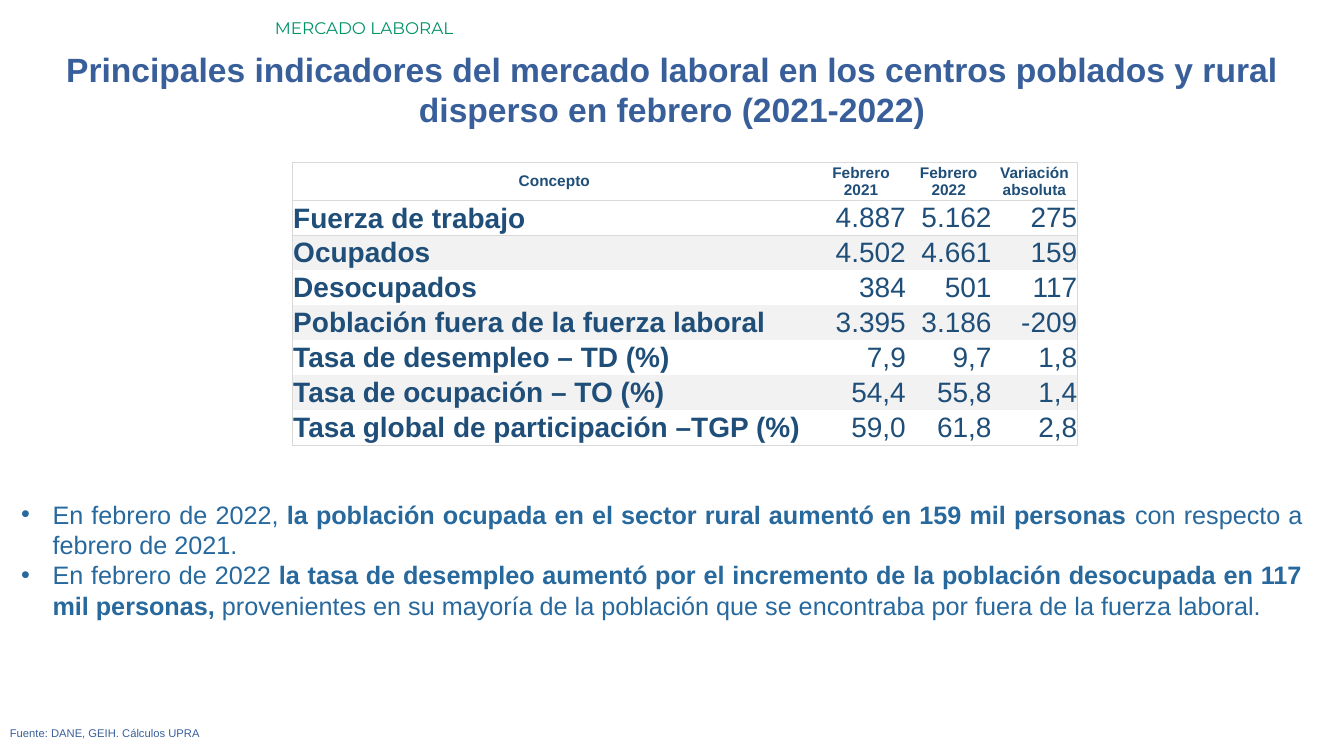
"""Build the rural labour market indicators slide."""
from lxml.etree import SubElement
from pptx import Presentation
from pptx.dml.color import RGBColor
from pptx.enum.text import MSO_ANCHOR, MSO_AUTO_SIZE, PP_ALIGN
from pptx.oxml import parse_xml
from pptx.oxml.ns import nsdecls, qn
from pptx.util import Cm, Pt

SECTION = "MERCADO LABORAL"
HEADLINE = ("Principales indicadores del mercado laboral en los centros poblados "
            "y rural disperso en febrero (2021-2022)")
SOURCE = "Fuente: DANE, GEIH. Cálculos UPRA"
INDICATORS = [
    ("Concepto", "Febrero\n2021", "Febrero\n2022", "Variación absoluta"),
    ("Fuerza de trabajo", "4.887", "5.162", "275"),
    ("Ocupados", "4.502", "4.661", "159"),
    ("Desocupados", "384", "501", "117"),
    ("Población fuera de la fuerza laboral", "3.395", "3.186", "-209"),
    ("Tasa de desempleo – TD (%)", "7,9", "9,7", "1,8"),
    ("Tasa de ocupación – TO (%)", "54,4", "55,8", "1,4"),
    ("Tasa global de participación –TGP (%)", "59,0", "61,8", "2,8"),
]
FINDINGS = [
    [("En febrero de 2022, ", False),
     ("la población ocupada en el sector rural aumentó en 159 mil personas ", True),
     ("con respecto a febrero de 2021.", False)],
    [("En febrero de 2022", False),
     (" la tasa de desempleo aumentó por el incremento de la población "
      "desocupada en 117 mil personas, ", True),
     ("provenientes en su mayoría de la población que se encontraba "
      "por fuera de la fuerza laboral.", False)],
]
COLUMN_WIDTHS = [13.2, 2.26, 2.16, 2.16]
HEADER_HEIGHT, ROW_HEIGHT = 0.97, 0.88
BLUE, NAVY, GREEN, SKY = "395F9B", "1F4E78", "009267", "27689D"
WHITE, BAND, RULE = "FFFFFF", "F2F2F2", "D9D9D9"


def color(hex_value):
    return RGBColor.from_string(hex_value)


def style(paragraph, size, hex_value, align, bold=None, family="Arial"):
    paragraph.alignment = align
    font = paragraph.font
    font.name, font.size, font.bold = family, Pt(size), bold
    font.color.rgb = color(hex_value)


def place(shape, left, top, width, height):
    shape.left, shape.top, shape.width, shape.height = map(Cm, (left, top, width, height))
    shape.text_frame.word_wrap = True
    shape.text_frame.auto_size = MSO_AUTO_SIZE.NONE


def add_label(slide, wording, bounds, *look, **options):
    label = slide.shapes.add_textbox(0, 0, 0, 0)
    place(label, *bounds)
    label.text_frame.text = wording
    style(label.text_frame.paragraphs[0], *look, **options)


def set_borders(cell, visible):
    for position, side in enumerate("LRTB"):
        if side in visible:
            paint = f'<a:solidFill><a:srgbClr val="{RULE}"/></a:solidFill>'
        else:
            paint = "<a:noFill/>"
        border = parse_xml(f'<a:ln{side} {nsdecls("a")} w="{Pt(0.5)}">{paint}</a:ln{side}>')
        cell._tc.get_or_add_tcPr().insert(position, border)


def add_indicators(slide):
    rows, columns = len(INDICATORS), len(COLUMN_WIDTHS)
    heights = [HEADER_HEIGHT] + [ROW_HEIGHT] * (rows - 1)
    table = slide.shapes.add_table(rows, columns, Cm(7.37), Cm(4.08),
                                   Cm(sum(COLUMN_WIDTHS)), Cm(sum(heights))).table
    table.first_row = table.horz_banding = False
    for column, width in zip(table.columns, COLUMN_WIDTHS):
        column.width = Cm(width)
    for r, (indicator, height) in enumerate(zip(INDICATORS, heights)):
        table.rows[r].height = Cm(height)
        for c, wording in enumerate(indicator):
            cell = table.cell(r, c)
            cell.text = wording
            cell.vertical_anchor = MSO_ANCHOR.MIDDLE
            inset = Cm(0.02) if r == 0 or c == 0 else 0
            cell.margin_left = cell.margin_right = cell.margin_top = inset
            cell.margin_bottom = 0
            cell.fill.solid()
            cell.fill.fore_color.rgb = color(BAND if r and r % 2 == 0 else WHITE)
            edges = {"L": c == 0, "R": c == columns - 1,
                     "T": r <= 2, "B": r <= 1 or r == rows - 1}
            set_borders(cell, [side for side, shown in edges.items() if shown])
            if r == 0:
                align = PP_ALIGN.CENTER
            else:
                align = PP_ALIGN.RIGHT if c else PP_ALIGN.LEFT
            for paragraph in cell.text_frame.paragraphs:
                style(paragraph, 20 if r else 11, NAVY, align, bold=r == 0 or c == 0)


def add_findings(body):
    place(body, 0.28, 12.45, 32.8, 3.33)
    frame = body.text_frame
    for i, finding in enumerate(FINDINGS):
        paragraph = frame.add_paragraph() if i else frame.paragraphs[0]
        properties = paragraph._p.get_or_add_pPr()
        properties.set("marL", str(Cm(0.79)))
        properties.set("indent", str(-Cm(0.79)))
        SubElement(properties, qn("a:buFont")).set("typeface", "Arial")
        SubElement(properties, qn("a:buChar")).set("char", "•")
        paragraph.space_before = Pt(0)
        style(paragraph, 18, SKY, PP_ALIGN.JUSTIFY)
        for wording, bold in finding:
            run = paragraph.add_run()
            run.text, run.font.bold = wording, bold


def main():
    deck = Presentation()
    deck.slide_width, deck.slide_height = Cm(33.87), Cm(19.05)
    slide = deck.slides.add_slide(deck.slide_layouts[1])
    title, body = slide.placeholders
    place(title, 0, 1.09, 33.87, 2.31)
    title.text_frame.text = HEADLINE
    style(title.text_frame.paragraphs[0], 24, BLUE, PP_ALIGN.CENTER, bold=True)
    add_label(slide, SECTION, (6.68, 0.33, 27.18, 0.76), 12, GREEN, PP_ALIGN.LEFT,
              family="Montserrat")
    add_label(slide, SOURCE, (0, 18.19, 32.8, 0.6), 8, BLUE, PP_ALIGN.JUSTIFY)
    add_findings(body)
    add_indicators(slide)
    deck.save("out.pptx")


if __name__ == "__main__":
    main()
